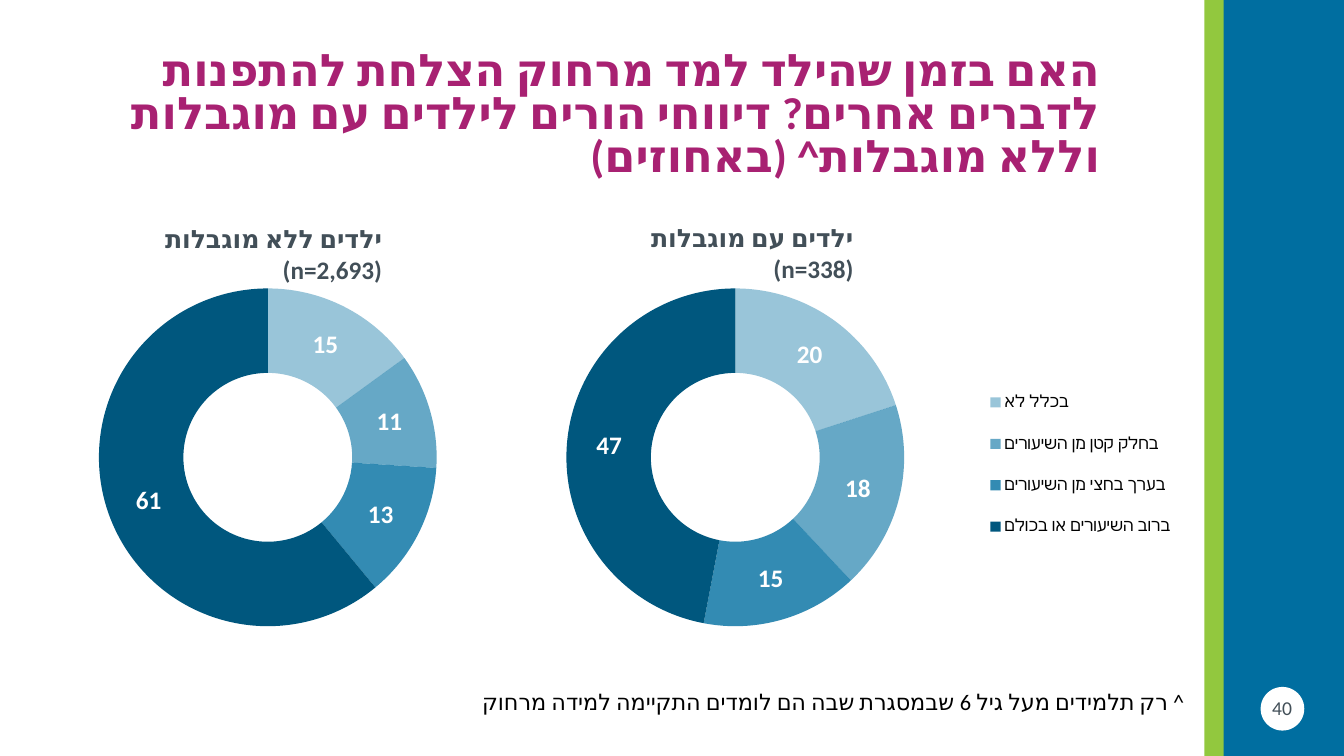
from dataclasses import dataclass

from lxml import etree
from pptx import Presentation
from pptx import util as u
from pptx.chart.data import CategoryChartData
from pptx.dml.color import RGBColor
from pptx.enum import chart as ch, shapes, text
from pptx.oxml import parse_xml
from pptx.oxml.ns import nsdecls, qn


@dataclass(frozen=True)
class Theme:
    font: str = "Calibri"
    blue: str = "006EA0"
    navy: str = "00577E"
    green: str = "92C83E"
    plum: str = "A82172"
    slate: str = "424F58"
    white: str = "FFFFFF"
    black: str = "000000"
    head: int = 32
    label: int = 18
    note: int = 16
    page: int = 14
    key: int = 12
    base: int = 10


class Deck:
    """Holds the style and the current slide, and draws each kind of element."""

    def __init__(self, theme):
        self.theme = theme
        self.prs = Presentation()
        self.prs.slide_width, self.prs.slide_height = u.Cm(33.87), u.Cm(19.05)
        self.slide = self.prs.slides.add_slide(self.prs.slide_layouts[5])

    def style(self, font, size, color, bold=False):
        font.size, font.bold, font.name = u.Pt(size), bold, self.theme.font
        font.color.rgb = RGBColor.from_string(color)

    def add_run(self, frame, words, size, color, bold=False, align="RIGHT"):
        frame.word_wrap = True
        para = frame.paragraphs[0]
        para.alignment = getattr(text.PP_ALIGN, align)
        para._p.get_or_add_pPr().set("rtl", "1")
        run = para.add_run()
        run.text = words
        self.style(run.font, size, color, bold)
        props = run._r.get_or_add_rPr()
        props.set("lang", "he-IL")
        etree.SubElement(props, qn("a:cs")).set("typeface", self.theme.font)
        return para

    def title(self, box, words):
        shape = self.slide.shapes.title
        shape.left, shape.top, shape.width, shape.height = map(u.Cm, box)
        frame = shape.text_frame
        frame.auto_size = text.MSO_AUTO_SIZE.NONE
        frame.vertical_anchor = text.MSO_ANCHOR.MIDDLE
        para = self.add_run(frame, words, self.theme.head, self.theme.plum, True)
        para.line_spacing = 0.8

    def label(self, box, words, size, color, bold=False, align="RIGHT"):
        frame = self.slide.shapes.add_textbox(*map(u.Cm, box)).text_frame
        self.add_run(frame, words, size, color, bold, align)

    def shape(self, kind, box, color):
        shape = self.slide.shapes.add_shape(kind, *map(u.Cm, box))
        shape.shadow.inherit = False
        shape.fill.solid()
        shape.fill.fore_color.rgb = RGBColor.from_string(color)
        shape.line.fill.background()

    def place(self, owner, inner, **parts):
        for old in owner.findall(qn("c:layout")):
            owner.remove(old)
        modes = {"layoutTarget": "inner"} if inner else {}
        modes |= {"xMode": "edge", "yMode": "edge"} | parts
        body = "".join(f'<c:{tag} val="{val}"/>' for tag, val in modes.items())
        return parse_xml(f'<c:layout {nsdecls("c")}><c:manualLayout>{body}'
                         '</c:manualLayout></c:layout>')

    def ring(self, box, names, values, legend=False):
        theme = self.theme
        data = CategoryChartData()
        data.categories = names
        data.add_series("Series 1", values)
        chart = self.slide.shapes.add_chart(
            ch.XL_CHART_TYPE.DOUGHNUT, *map(u.Cm, box), data).chart
        chart.has_title = False
        self.style(chart.font, theme.base, theme.slate)
        root = chart._chartSpace.find(qn("c:chart"))
        root.addnext(parse_xml(f'<c:spPr {nsdecls("c", "a")}><a:noFill/>'
                               '<a:ln><a:noFill/></a:ln></c:spPr>'))
        area = root.find(qn("c:plotArea"))
        area.insert(0, self.place(area, True, x=0.22, y=0.06, w=0.55, h=0.71))

        plot = chart.plots[0]
        plot.vary_by_categories = True
        plot.has_data_labels = True
        tags = plot.series[0].data_labels
        tags.show_value = True
        tags.show_percentage = False
        tags.show_legend_key = False
        self.style(tags.font, theme.label, theme.white, True)
        tints = [(theme.blue, 40), (theme.blue, 60), (theme.blue, 80), (theme.navy, 100)]
        for i, (color, alpha) in enumerate(tints):
            look = plot.series[0].points[i].format
            look.line.fill.background()
            look.fill.solid()
            look.fill.fore_color.rgb = RGBColor.from_string(color)
            if alpha < 100:
                node = look.fill._xPr.find(qn("a:solidFill"))[0]
                etree.SubElement(node, qn("a:alpha")).set("val", str(alpha * 1000))

        chart.has_legend = legend
        if legend:
            key = chart.legend
            key.position = ch.XL_LEGEND_POSITION.RIGHT
            key.include_in_layout = False
            self.style(key.font, theme.key, theme.black)
            item = key._element
            spot = self.place(item, False, x=0.73, y=0.23, w=0.18, h=0.4)
            item.find(qn("c:legendPos")).addnext(spot)


def main():
    theme = Theme()
    deck = Deck(theme)
    rect, oval = shapes.MSO_SHAPE.RECTANGLE, shapes.MSO_SHAPE.OVAL
    deck.shape(rect, (30.35, 0, 0.5, 19.05), theme.green)
    deck.shape(rect, (30.84, 0, 3.03, 19.05), theme.blue)
    deck.shape(oval, (31.77, 17.31, 1.1, 1.1), theme.white)
    deck.label((31.57, 17.42, 1.48, 1.02), "40", theme.page, theme.slate, align="CENTER")

    deck.title((1.22, 1.09, 26.77, 3.68),
               "האם בזמן שהילד למד מרחוק הצלחת להתפנות לדברים אחרים? "
               "דיווחי הורים לילדים עם מוגבלות וללא מוגבלות^ (באחוזים)")

    names = ["בכלל לא", "בחלק קטן מן השיעורים",
             "בערך בחצי מן השיעורים", "ברוב השיעורים או בכולם"]
    deck.ring((5.28, 6.55, 26.77, 11.99), names, (20, 18, 15, 47), legend=True)
    deck.ring((-2.64, 6.55, 18.97, 11.99), names, (15, 11, 13, 61))

    for box, words in (
        ((14.22, 5.49, 7.54, 1.02), "ילדים עם מוגבלות (n=338)"),
        ((1.68, 5.51, 8.2, 1.02), "ילדים ללא מוגבלות (n=2,693)"),
    ):
        deck.label(box, words, theme.label, theme.slate, True)
    deck.label((8.79, 17.22, 21.31, 0.94),
               "^ רק תלמידים מעל גיל 6 שבמסגרת שבה הם לומדים התקיימה למידה מרחוק",
               theme.note, theme.black)
    deck.prs.save("out.pptx")


if __name__ == "__main__":
    main()
